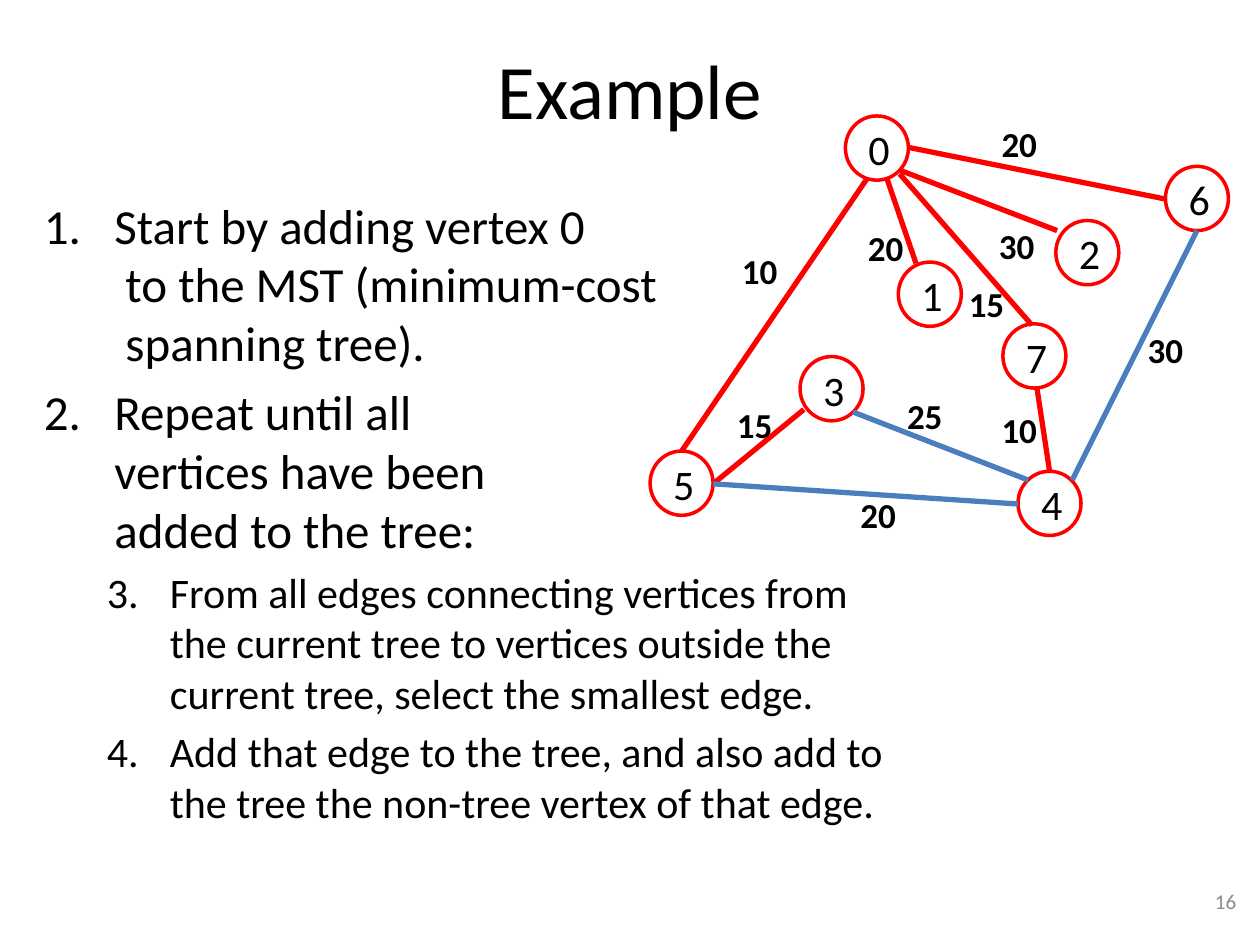
from dataclasses import dataclass
from typing import NamedTuple

from pptx import Presentation
from pptx.dml.color import RGBColor
from pptx.enum.shapes import MSO_CONNECTOR, MSO_SHAPE
from pptx.enum.text import MSO_ANCHOR, PP_ALIGN
from pptx.oxml.ns import qn
from pptx.util import Inches, Pt
from lxml import etree

LEFT, CENTER, RIGHT = PP_ALIGN.LEFT, PP_ALIGN.CENTER, PP_ALIGN.RIGHT
TOP, MIDDLE = MSO_ANCHOR.TOP, MSO_ANCHOR.MIDDLE
OVAL, STRAIGHT = MSO_SHAPE.OVAL, MSO_CONNECTOR.STRAIGHT


@dataclass(frozen=True)
class Theme:
    font: str = "Calibri"
    text: RGBColor = RGBColor(0x00, 0x00, 0x00)
    muted: RGBColor = RGBColor(0x8C, 0x8C, 0x8C)
    tree: RGBColor = RGBColor(0xFF, 0x00, 0x00)
    other: RGBColor = RGBColor(0x4B, 0x7E, 0xBC)
    title_size: int = 44
    step_size: int = 28
    substep_size: int = 24
    vertex_size: int = 24
    weight_size: int = 20
    number_size: int = 12
    vertex_line: float = 2
    edge_line: float = 3


class Vertex(NamedTuple):
    name: str
    left: float
    top: float


class Edge(NamedTuple):
    start: tuple[float, float]
    end: tuple[float, float]
    in_tree: bool = True


class Weight(NamedTuple):
    value: str
    left: float
    top: float


class Step(NamedTuple):
    text: str
    level: int = 0


THEME = Theme()
VERTEX_WIDTH, VERTEX_HEIGHT = 0.5, 0.51

STEPS = [
    Step("Start by adding vertex 0\n to the MST (minimum-cost\n spanning tree)."),
    Step("Repeat until all \nvertices have been \nadded to the tree:"),
    Step("From all edges connecting vertices from the current tree to vertices "
         "outside the current tree, select the smallest edge.", 1),
    Step("Add that edge to the tree, and also add to the tree the non-tree "
         "vertex of that edge.", 1),
]

VERTICES = [
    Vertex("0", 6.71, 0.92),
    Vertex("1", 7.13, 2.08),
    Vertex("7", 7.96, 2.57),
    Vertex("2", 8.38, 1.75),
    Vertex("5", 5.16, 3.58),
    Vertex("3", 6.35, 2.83),
    Vertex("4", 8.08, 3.74),
    Vertex("6", 9.25, 1.32),
]

EDGES = [
    Edge((7.21, 1.17), (9.25, 1.58)),
    Edge((7.14, 1.35), (8.39, 1.83)),
    Edge((7.04, 1.42), (7.27, 2.09)),
    Edge((6.88, 1.42), (5.41, 3.58)),
    Edge((7.14, 1.38), (8.19, 2.58)),
    Edge((5.66, 3.84), (6.38, 3.25)),
    Edge((5.66, 3.84), (8.08, 4), False),
    Edge((6.77, 3.27), (8.16, 3.81), False),
    Edge((8.23, 3.08), (8.33, 3.74)),
    Edge((9.5, 1.83), (8.51, 3.81), False),
]

WEIGHTS = [
    Weight("10", 5.79, 1.93),
    Weight("20", 7.85, 0.92),
    Weight("30", 7.83, 1.73),
    Weight("20", 6.79, 1.75),
    Weight("15", 7.59, 2.19),
    Weight("30", 9.01, 2.56),
    Weight("10", 7.85, 3.19),
    Weight("20", 6.73, 3.87),
    Weight("15", 5.75, 3.15),
    Weight("25", 7.1, 3.08),
]


def write(paragraph, text: str, *, size: int, color: RGBColor = THEME.text,
          bold: bool = False, align=LEFT) -> None:
    paragraph.text = text
    paragraph.alignment = align
    for run in paragraph.runs:
        run.font.name = THEME.font
        run.font.size = Pt(size)
        run.font.bold = bold
        run.font.color.rgb = color


def add_frame(slide, left: float, top: float, width: float, height: float,
              anchor=TOP, wrap: bool = True):
    box = slide.shapes.add_textbox(Inches(left), Inches(top), Inches(width), Inches(height))
    frame = box.text_frame
    frame.word_wrap = wrap
    frame.vertical_anchor = anchor
    return frame


def number_paragraph(paragraph, indent: float, hanging: float, start: int) -> None:
    properties = paragraph._p.get_or_add_pPr()
    properties.set("marL", str(Inches(indent)))
    properties.set("indent", str(-Inches(hanging)))
    etree.SubElement(properties, qn("a:buFont"), typeface=THEME.font)
    etree.SubElement(properties, qn("a:buAutoNum"), type="arabicPeriod", startAt=str(start))


def add_steps(slide) -> None:
    frame = add_frame(slide, 0.25, 1.5, 6.89, 5.5)
    for index, step in enumerate(STEPS):
        paragraph = frame.add_paragraph() if index else frame.paragraphs[0]
        size = THEME.substep_size if step.level else THEME.step_size
        write(paragraph, step.text, size=size)
        paragraph.level = step.level
        paragraph.space_before = Pt(size * 0.2)
        if step.level:
            number_paragraph(paragraph, 1, 0.5, 3)
        else:
            number_paragraph(paragraph, 0.56, 0.56, 1)


def add_vertex(slide, vertex: Vertex) -> None:
    circle = slide.shapes.add_shape(OVAL, Inches(vertex.left), Inches(vertex.top),
                                    Inches(VERTEX_WIDTH), Inches(VERTEX_HEIGHT))
    circle.shadow.inherit = False
    circle.fill.background()
    circle.line.color.rgb = THEME.tree
    circle.line.width = Pt(THEME.vertex_line)
    frame = add_frame(slide, vertex.left, vertex.top + 0.01, 0.46, 0.5)
    write(frame.paragraphs[0], f" {vertex.name}", size=THEME.vertex_size, align=CENTER)


def add_edge(slide, edge: Edge) -> None:
    ends = [Inches(value) for value in (*edge.start, *edge.end)]
    connector = slide.shapes.add_connector(STRAIGHT, *ends)
    connector.line.color.rgb = THEME.tree if edge.in_tree else THEME.other
    connector.line.width = Pt(THEME.edge_line)
    etree.SubElement(connector._element.spPr, qn("a:effectLst"))


def add_weight(slide, weight: Weight) -> None:
    frame = add_frame(slide, weight.left, weight.top, 0.49, 0.44, wrap=False)
    write(frame.paragraphs[0], weight.value, size=THEME.weight_size, bold=True)


def main() -> None:
    presentation = Presentation()
    presentation.slide_width, presentation.slide_height = Inches(10), Inches(7.5)
    slide = presentation.slides.add_slide(presentation.slide_layouts[6])

    title = add_frame(slide, 0.5, 0.08, 9, 1.25, MIDDLE)
    write(title.paragraphs[0], "Example", size=THEME.title_size, align=CENTER)
    add_steps(slide)
    number = add_frame(slide, 7.58, 6.95, 2.33, 0.4, MIDDLE)
    write(number.paragraphs[0], "16", size=THEME.number_size, color=THEME.muted, align=RIGHT)

    for vertex in VERTICES:
        add_vertex(slide, vertex)
    for edge in EDGES:
        add_edge(slide, edge)
    for weight in WEIGHTS:
        add_weight(slide, weight)

    presentation.save("out.pptx")


if __name__ == "__main__":
    main()
